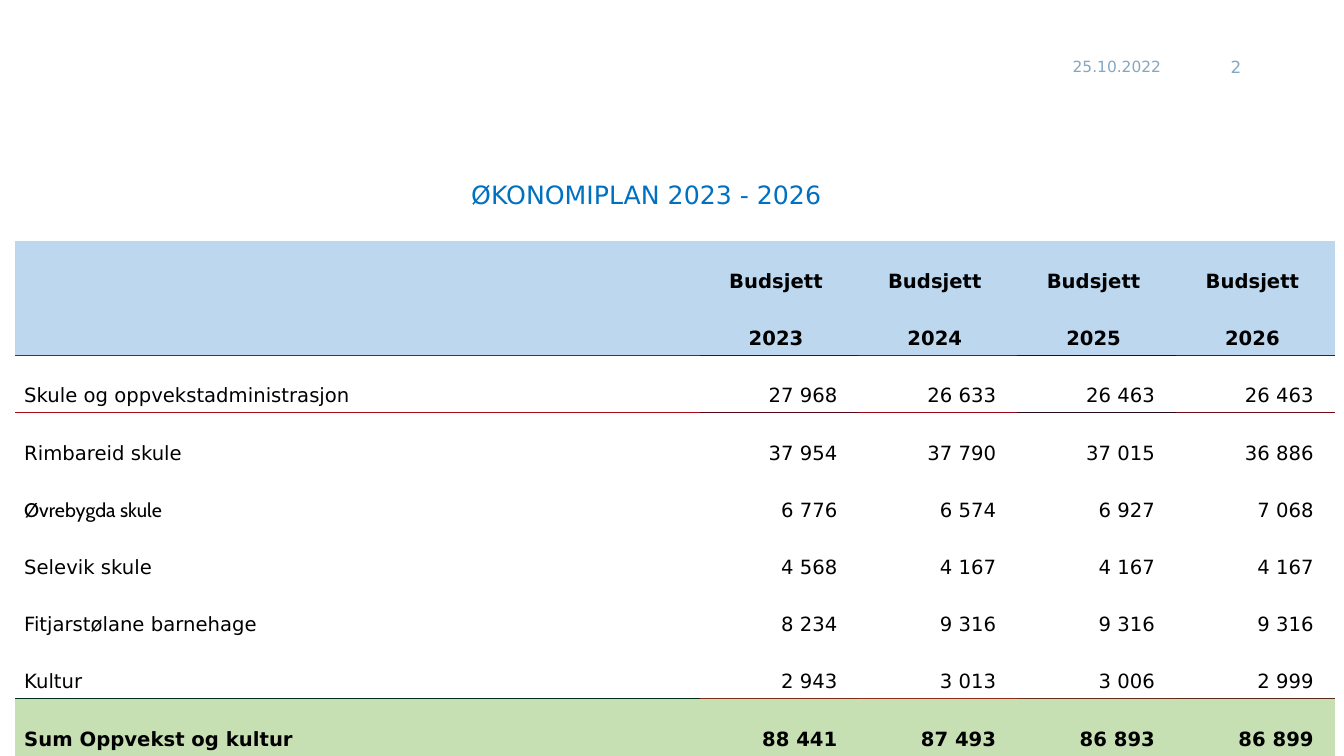
"""Build the budget plan slide with its table of yearly figures."""
import dataclasses

import lxml.etree
import pptx
import pptx.dml.color
import pptx.enum.text
import pptx.oxml.ns
import pptx.util

TITLE = "ØKONOMIPLAN 2023 - 2026"
DATE, PAGE = "25.10.2022", "2"
HEADS = [
    ("", "Budsjett", "Budsjett", "Budsjett", "Budsjett"),
    ("", "2023", "2024", "2025", "2026"),
]
UNITS = [
    ("Skule og oppvekstadministrasjon", "27 968", "26 633", "26 463", "26 463"),
    ("Rimbareid skule", "37 954", "37 790", "37 015", "36 886"),
    ("Øvrebygda skule", "6 776", "6 574", "6 927", "7 068"),
    ("Selevik skule", "4 568", "4 167", "4 167", "4 167"),
    ("Fitjarstølane barnehage", "8 234", "9 316", "9 316", "9 316"),
    ("Kultur", "2 943", "3 013", "3 006", "2 999"),
]
TOTAL = ("Sum Oppvekst og kultur", "88 441", "87 493", "86 893", "86 899")
ROWS = HEADS + UNITS + [TOTAL]
LAST = len(ROWS) - 1
RULES = {
    len(HEADS) - 1: ("A8081A", "58071A", "98061A", "280A1A", "700A1A"),
    LAST - 1: ("002C1A", "782C1A", "902F1A", "682D1A", "582E1A"),
    LAST: ("982D1A", "A8321A", "F0321A", "28311A", "A0341A"),
}
PLAIN = "{2D5ABB26-0587-4C30-8999-92F81FD0307C}"

Inches = pptx.util.Inches
ALIGN = pptx.enum.text.PP_ALIGN
ANCHOR = pptx.enum.text.MSO_ANCHOR


@dataclasses.dataclass(frozen=True)
class Theme:
    """Hold the fonts, colours and type sizes."""
    font: str = "DejaVu Sans"
    accent: str = "Cabin"
    ink: str = "000000"
    muted: str = "86A7C2"
    blue: str = "0070C0"
    head: str = "BDD7EE"
    total: str = "C6E0B4"
    title: int = 18
    body: int = 14
    page: int = 12
    date: int = 11


LOOK = Theme()


def color(code):
    """Turn a hex code into a colour."""
    return pptx.dml.color.RGBColor.from_string(code)


def write(frame, text, size=LOOK.body, ink=LOOK.ink, font=LOOK.font,
          bold=False, align=ALIGN.LEFT):
    """Put formatted text in a frame."""
    frame.word_wrap = True
    para = frame.paragraphs[0]
    para.alignment = align
    run = para.add_run()
    run.text = text
    run.font.size = pptx.util.Pt(size)
    run.font.name = font
    run.font.bold = bold
    run.font.color.rgb = color(ink)


def place(shape, left, top, width, height):
    """Move and size a shape in inches."""
    shape.left, shape.top = Inches(left), Inches(top)
    shape.width, shape.height = Inches(width), Inches(height)


def rule(cell, side, code):
    """Draw a thin border on one side of a cell."""
    line = lxml.etree.Element(pptx.oxml.ns.qn(f"a:ln{side}"), w="9525")
    fill = lxml.etree.SubElement(line, pptx.oxml.ns.qn("a:solidFill"))
    lxml.etree.SubElement(fill, pptx.oxml.ns.qn("a:srgbClr"), val=code)
    cell._tc.get_or_add_tcPr().insert(0, line)


def style(cell, row, col):
    """Fill one cell with its text, colour and borders."""
    text = ROWS[row][col]
    head = row < len(HEADS)
    shade = LOOK.head if head else LOOK.total if row == LAST else None
    if shade:
        cell.fill.solid()
        cell.fill.fore_color.rgb = color(shade)
    else:
        cell.fill.background()
    cell.vertical_anchor = ANCHOR.BOTTOM
    cell.margin_left = Inches(0.09)
    cell.margin_right = Inches(0.15 if head else 0.21 if col else 0.09)
    cell.margin_top = cell.margin_bottom = Inches(0.05)
    if text:
        write(cell.text_frame, text, bold=head or row == LAST,
              font=LOOK.accent if text == "Øvrebygda skule" else LOOK.font,
              align=ALIGN.CENTER if head else ALIGN.RIGHT if col else ALIGN.LEFT)
    for side, above in (("B", row), ("T", row - 1)):
        if above in RULES:
            rule(cell, side, RULES[above][col])


def grid(slide):
    """Add the budget table."""
    left, top, width, height, first = 0.15, 2.39, 13.09, 5.11, 6.79
    count = len(TOTAL)
    table = slide.shapes.add_table(
        len(ROWS), count, Inches(left), Inches(top), Inches(width), Inches(height)).table
    table.first_row = table.horz_banding = False
    table._tbl.tblPr.find(pptx.oxml.ns.qn("a:tableStyleId")).text = PLAIN
    for col, item in enumerate(table.columns):
        item.width = Inches((width - first) / (count - 1) if col else first)
    for row, item in enumerate(table.rows):
        item.height = Inches(height / len(ROWS))
        for col, cell in enumerate(item.cells):
            style(cell, row, col)


def main():
    """Build and save the slide."""
    deck = pptx.Presentation()
    deck.slide_width, deck.slide_height = Inches(13.33), Inches(7.5)
    slide = deck.slides.add_slide(deck.slide_layouts[5])
    for text, left, width, size, align in (
            (DATE, 10.54, 1.15, LOOK.date, ALIGN.LEFT),
            (PAGE, 11.84, 0.57, LOOK.page, ALIGN.RIGHT)):
        box = slide.shapes.add_textbox(0, 0, 0, 0)
        place(box, left, 0.46, width, 0.4)
        box.text_frame.vertical_anchor = ANCHOR.MIDDLE
        write(box.text_frame, text, size=size, ink=LOOK.muted, align=align)
    title = slide.shapes.title
    place(title, 2.83, 1.73, 7.16, 0.4)
    title.text_frame.auto_size = pptx.enum.text.MSO_AUTO_SIZE.NONE
    title.text_frame.vertical_anchor = ANCHOR.TOP
    write(title.text_frame, TITLE, size=LOOK.title, ink=LOOK.blue, align=ALIGN.CENTER)
    grid(slide)
    deck.save("out.pptx")


if __name__ == "__main__":
    main()
